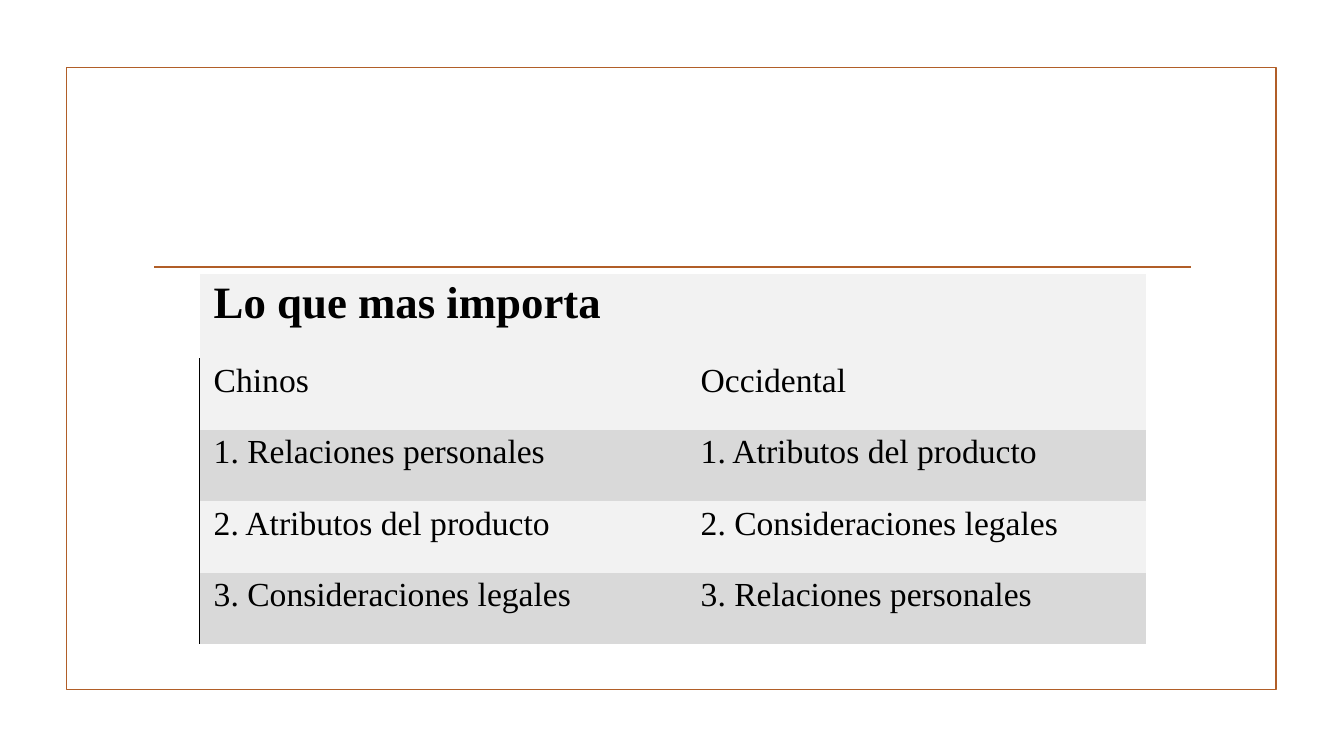
from lxml import etree
from pptx import Presentation
from pptx.dml.color import RGBColor
from pptx.enum.shapes import MSO_CONNECTOR, MSO_SHAPE
from pptx.enum.text import MSO_ANCHOR
from pptx.oxml import parse_xml
from pptx.oxml.ns import nsdecls, qn
from pptx.util import Inches, Pt

LINE = MSO_CONNECTOR.STRAIGHT
RECT = MSO_SHAPE.RECTANGLE
TOP, BOTTOM = MSO_ANCHOR.TOP, MSO_ANCHOR.BOTTOM

RUST = RGBColor(0xB1, 0x5E, 0x28)
BLACK = RGBColor(0, 0, 0)
LIGHT = RGBColor(0xF2, 0xF2, 0xF2)
GREY = RGBColor(0xD9, 0xD9, 0xD9)

FONT = "Times New Roman"
PLAIN_STYLE = "{2D5ABB26-0587-4C30-8999-92F81FD0307C}"
WIDTHS = (4.83, 4.56)
HEAD_HEIGHT = 0.82
ROWS = (
    ("Lo que mas importa", ""),
    ("Chinos", "Occidental"),
    ("1. Relaciones personales", "1. Atributos del producto"),
    ("2. Atributos del producto", "2. Consideraciones legales"),
    ("3. Consideraciones legales", "3. Relaciones personales"),
)


def add_frame(slide, left, top, width, height):
    """Draw the outline and the rule inside it."""
    box = slide.shapes.add_shape(
        RECT, Inches(left), Inches(top), Inches(width), Inches(height))
    box.shadow.inherit = False
    box.fill.background()
    y = Inches(top + 1.98)
    rule = slide.shapes.add_connector(
        LINE, Inches(left + 0.87), y, Inches(left + width - 0.85), y)
    etree.SubElement(rule.element.spPr, qn("a:effectLst"))
    for shape in (box, rule):
        shape.line.color.rgb = RUST
        shape.line.width = Pt(1.25)


def add_edge(cell):
    """Give a cell a thin black left border."""
    edge = parse_xml(
        f'<a:lnL {nsdecls("a")} w="12700"><a:solidFill>'
        f'<a:srgbClr val="{BLACK}"/></a:solidFill></a:lnL>')
    cell._tc.get_or_add_tcPr().insert(0, edge)


def fill_cell(cell, text, head, color):
    """Set the fill, margins and text of one cell."""
    cell.fill.solid()
    cell.fill.fore_color.rgb = color
    cell.margin_left, cell.margin_right = Inches(0.14), Inches(0.2)
    cell.margin_top, cell.margin_bottom = Inches(0.04), Inches(0.3)
    cell.vertical_anchor = BOTTOM if head else TOP
    cell.text = text
    font = cell.text_frame.paragraphs[0].font
    font.name = FONT
    font.size = Pt(32 if head else 24)
    font.bold = head
    font.color.rgb = BLACK


def add_grid(slide, left, top, width, height):
    """Build the table that compares the two groups."""
    frame = slide.shapes.add_table(
        len(ROWS), len(WIDTHS),
        Inches(left), Inches(top), Inches(width), Inches(height))
    table = frame.table
    table.first_row = table.horz_banding = False
    table._tbl.tblPr.find(qn("a:tableStyleId")).text = PLAIN_STYLE
    for column, size in zip(table.columns, WIDTHS):
        column.width = Inches(size)
    step = (height - HEAD_HEIGHT) / (len(ROWS) - 1)
    for i, texts in enumerate(ROWS):
        head = i == 0
        table.rows[i].height = Inches(HEAD_HEIGHT if head else step)
        color = GREY if i in (2, 4) else LIGHT
        for j, text in enumerate(texts):
            fill_cell(table.cell(i, j), text, head, color)
        if not head:
            add_edge(table.cell(i, 0))


def main():
    """Build and save the slide."""
    deck = Presentation()
    deck.slide_width, deck.slide_height = Inches(13.33), Inches(7.5)
    slide = deck.slides.add_slide(deck.slide_layouts[6])
    add_frame(slide, 0.66, 0.67, 12, 6.17)
    add_grid(slide, 1.98, 2.72, sum(WIDTHS), 3.66)
    deck.save("out.pptx")


if __name__ == "__main__":
    main()
